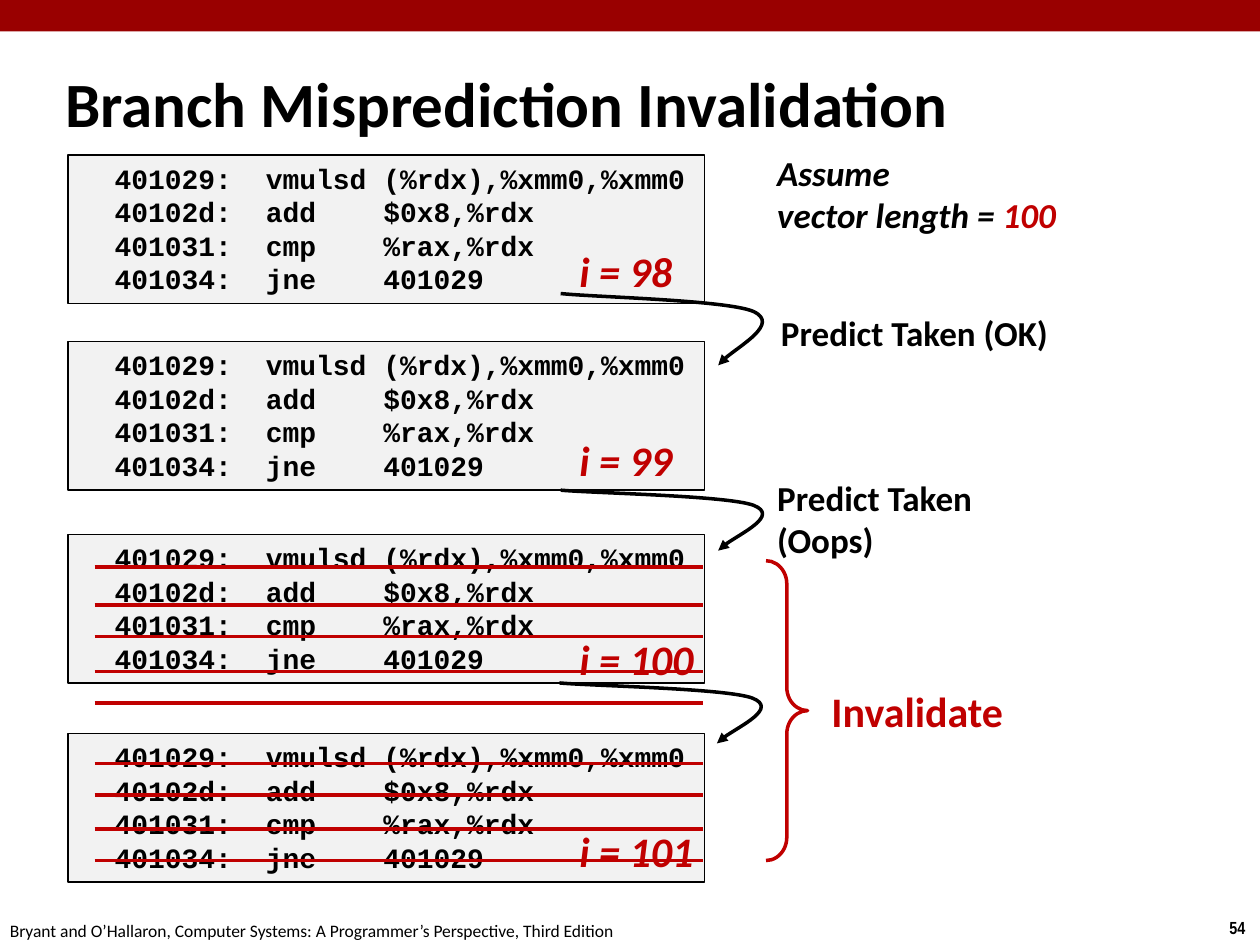
from dataclasses import dataclass
from lxml.etree import SubElement
from pptx import Presentation
from pptx.dml.color import RGBColor
from pptx.enum.shapes import MSO_CONNECTOR, MSO_SHAPE
from pptx.enum.text import MSO_ANCHOR, PP_ALIGN
from pptx.oxml.ns import qn
from pptx.util import Inches, Pt


@dataclass(frozen=True)
class Theme:
    black: str = "000000"
    red: str = "C00000"
    bar: str = "990000"
    pale: str = "F2F2F2"
    body: str = "Calibri"
    mono: str = "Courier New"
    narrow: str = "Arial Narrow"
    title: int = 36
    big: int = 24
    mid: int = 20
    code: int = 16
    small: int = 10
    thin: float = 0.75
    thick: float = 2


CELL = 0.1
CODE = [
    "401029:\tvmulsd\t(%rdx),%xmm0,%xmm0",
    "40102d:\tadd\t$0x8,%rdx",
    "401031:\tcmp\t%rax,%rdx",
    "401034:\tjne\t401029",
]
TABS = (12, 21.33)
BEND = [(0, 0), (2.6, 0.05), (13.2, 0.09), (15.3, 0.25),
        (17.4, 0.42), (13.1, 0.84), (12.5, 1)]


def cells(*vals):
    return [Inches(v * CELL) for v in vals]


def paint(fill, color):
    fill.solid()
    fill.fore_color.rgb = RGBColor.from_string(color)


class Page:
    def __init__(self, slide, theme):
        self.slide, self.theme = slide, theme
        self.shapes = slide.shapes

    def stroke(self, shape, color, width):
        paint(shape.line.fill, color)
        shape.line.width = Pt(width)

    def words(self, frame, lines, size, color=None, face=None, **style):
        look = {"size": Pt(size), "name": face or self.theme.body,
                "bold": True, "italic": False, **style}
        for n, line in enumerate(lines):
            para = frame.paragraphs[0] if n == 0 else frame.add_paragraph()
            para.alignment = PP_ALIGN.LEFT
            for part in [line] if isinstance(line, str) else line:
                text, tint = (part, color) if isinstance(part, str) else part
                run = para.add_run()
                run.text = text
                for key, value in look.items():
                    setattr(run.font, key, value)
                paint(run.font.fill, tint or self.theme.black)

    def label(self, box, lines, size, anchor=MSO_ANCHOR.TOP, **style):
        frame = self.shapes.add_textbox(*cells(*box)).text_frame
        frame.word_wrap = False
        frame.vertical_anchor = anchor
        self.words(frame, lines, size, **style)

    def shape(self, kind, box, fill=None, line=None, width=0):
        shape = self.shapes.add_shape(kind, *cells(*box))
        shape.shadow.inherit = False
        if fill:
            paint(shape.fill, fill)
        else:
            shape.fill.background()
        if line:
            self.stroke(shape, line, width)
        else:
            shape.line.fill.background()
        return shape

    def code(self, top):
        theme = self.theme
        shape = self.shape(MSO_SHAPE.RECTANGLE, (5.4, top, 50.5, 11.8),
                           theme.pale, theme.black, theme.thin)
        frame = shape.text_frame
        form = {"word_wrap": True, "vertical_anchor": MSO_ANCHOR.TOP,
                "margin_left": Inches(0.37), "margin_right": Inches(0.05)}
        for key, value in form.items():
            setattr(frame, key, value)
        self.words(frame, CODE, theme.code, face=theme.mono)
        for para in frame.paragraphs:
            stops = SubElement(para._p.get_or_add_pPr(), qn("a:tabLst"))
            for pos in cells(*TABS):
                SubElement(stops, qn("a:tab"), pos=str(int(pos)), algn="l")

    def arrow(self, left, top, high):
        spots = [cells(left + x, top + y * high) for x, y in BEND]
        pen = self.shapes.build_freeform(*spots[0])
        pen.add_line_segments(spots[1:], close=False)
        shape = pen.convert_to_shape()
        shape.shadow.inherit = False
        shape.fill.background()
        self.stroke(shape, self.theme.black, self.theme.thick)
        steps = list(shape._element.iter(qn("a:lnTo")))
        route = steps[0].getparent()
        for n in range(0, len(steps), 3):
            curve = SubElement(route, qn("a:cubicBezTo"))
            for step in steps[n:n + 3]:
                curve.append(step[0])
                route.remove(step)
        edge = shape._element.spPr.get_or_add_ln()
        SubElement(edge, qn("a:tailEnd"), type="triangle")

    def strike(self, row):
        line = self.shapes.add_connector(
            MSO_CONNECTOR.STRAIGHT, *cells(7.5, row, 55.8, row))
        self.stroke(line, self.theme.red, self.theme.thick)
        SubElement(line._element.spPr, qn("a:effectLst"))


def main():
    deck = Presentation()
    deck.slide_width, deck.slide_height = cells(100, 75)
    theme = Theme()
    page = Page(deck.slides.add_slide(deck.slide_layouts[6]), theme)

    page.shape(MSO_SHAPE.RECTANGLE, (0, 0, 100, 2.5), theme.bar)
    page.label((96.6, 72.3, 3.4, 2.7), ["54"], theme.small, face=theme.narrow)
    page.label((-0.2, 72.5, 50.8, 2.7),
               ["Bryant and O’Hallaron, Computer Systems: "
                "A Programmer’s Perspective, Third Edition"],
               theme.small, bold=False)
    page.label((4.2, 5, 86.9, 6.3), ["Branch Misprediction Invalidation"],
               theme.title, MSO_ANCHOR.MIDDLE)

    for top in (12.3, 27.1, 42.4, 58.2):
        page.code(top)
    for bend in ((44.5, 23.3, 5.7), (44.5, 38.9, 4.8), (44.4, 54.2, 4.8)):
        page.arrow(*bend)
    for step, top, wide in ((98, 19, 9.4), (99, 34, 9.4),
                            (100, 49.8, 11.1), (101, 65, 11.1)):
        page.label((45, top, wide, 5), [f"i = {step}"], theme.big,
                   color=theme.red, italic=True)

    page.label((60.7, 11.5, 24.3, 7.7),
               ["Assume", ["vector length = ", ("100", theme.red)]],
               theme.mid, italic=True)
    page.label((61, 24.2, 23.4, 4.4), ["Predict Taken (OK)"], theme.mid)
    page.label((60.7, 37.3, 17.6, 7.7), ["Predict Taken", "(Oops)"], theme.mid)
    page.label((65, 53.9, 15.8, 5), ["Invalidate"], theme.big, color=theme.red)

    for row in (45, 48, 50.5, 53.3, 55.8, 60.6, 63.1, 65.8, 68.3):
        page.strike(row)
    brace = page.shape(MSO_SHAPE.RIGHT_BRACE, (60.8, 44.5, 3.3, 23.8),
                       line=theme.red, width=theme.thick)
    brace.adjustments[0] = 0.56
    deck.save("out.pptx")


if __name__ == "__main__":
    main()
